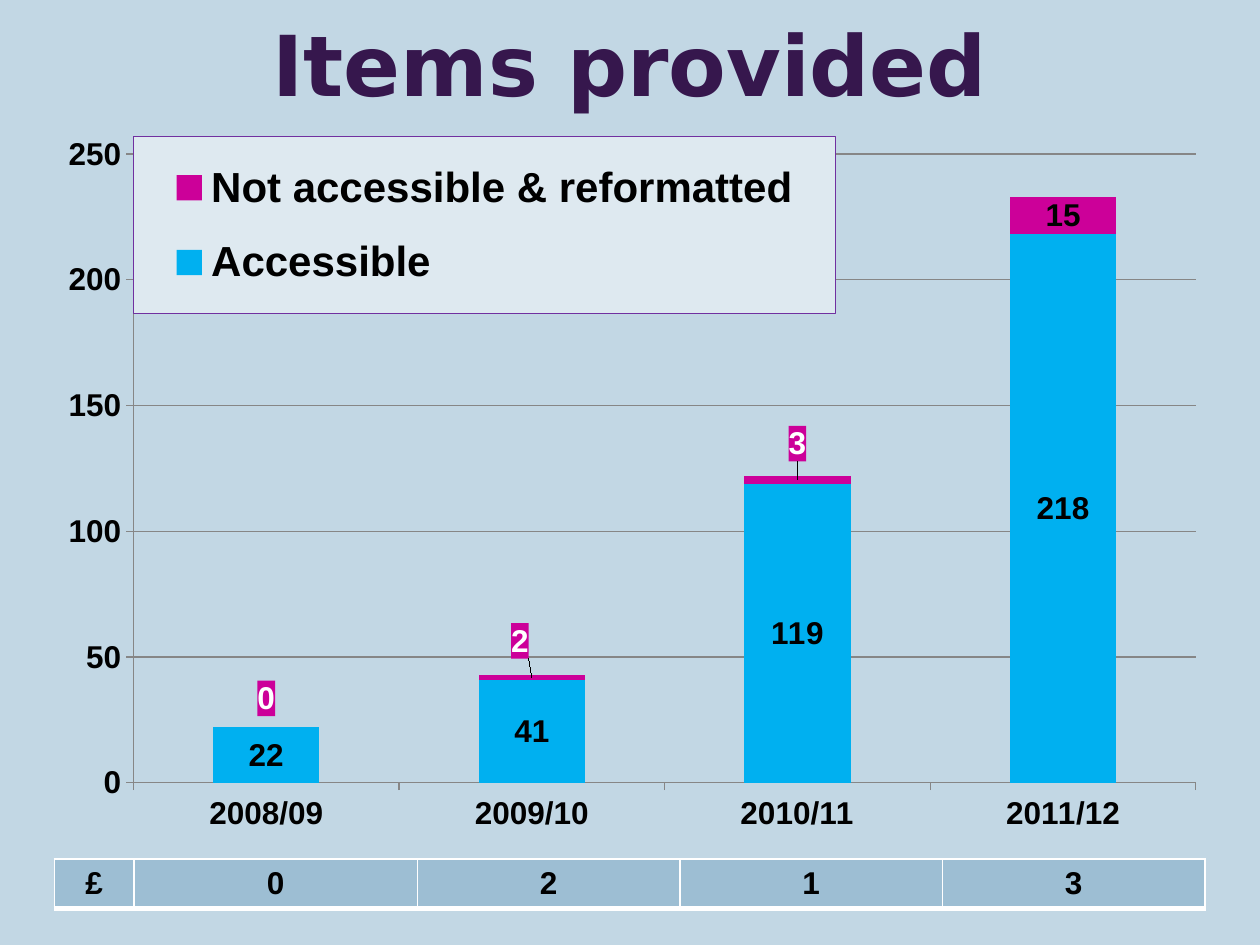
from lxml.etree import fromstring
from pptx import Presentation
from pptx.chart.data import CategoryChartData
from pptx.dml.color import RGBColor
from pptx.enum.chart import XL_CHART_TYPE, XL_LEGEND_POSITION, XL_TICK_MARK
from pptx.enum.text import MSO_ANCHOR, PP_ALIGN
from pptx.util import Pt

PALE = RGBColor(0xC2, 0xD7, 0xE4)
STEEL = RGBColor(0x9D, 0xBE, 0xD3)
PLUM = RGBColor(0x36, 0x17, 0x4D)
BLACK = RGBColor(0, 0, 0)
WHITE = RGBColor(0xFF, 0xFF, 0xFF)
GREY = RGBColor(0x86, 0x86, 0x86)
BLUE = RGBColor(0x00, 0xB0, 0xF0)
PINK = RGBColor(0xCC, 0x00, 0x99)
MIST = RGBColor(0xDE, 0xE9, 0xF0)
PURPLE = RGBColor(0x70, 0x30, 0xA0)

NS = ('xmlns:c="http://schemas.openxmlformats.org/drawingml/2006/chart" '
      'xmlns:a="http://schemas.openxmlformats.org/drawingml/2006/main"')
TITLE = {"name": "DejaVu Sans", "size": Pt(48), "bold": True}
BODY = {"name": "Arial", "size": Pt(18), "bold": True}
KEY = {"name": "Arial", "size": Pt(24), "bold": True}

YEARS = ["2008/09", "2009/10", "2010/11", "2011/12"]
SERIES = [
    ("Accessible", (22, 41, 119, 218), BLUE),
    ("Not accessible & reformatted", (0, 2, 3, 15), PINK),
]
SHIFTS = [(0, -0.04), (-0.01, -0.05), (0, -0.05)]
COSTS = ["£", "0", "2", "1", "3"]
WIDTHS = [45.5, 162, 150, 150, 150]


def style(font, values, color):
    for name, value in values.items():
        setattr(font, name, value)
    font.color.rgb = color


def solid(color):
    return f'<a:solidFill><a:srgbClr val="{color}"/></a:solidFill>'


def arrange(node, index, inner=False, **sizes):
    for old in node.xpath("c:layout"):
        node.remove(old)
    target = '<c:layoutTarget val="inner"/>' if inner else ""
    modes = "" if "w" not in sizes else (
        '<c:xMode val="edge"/><c:yMode val="edge"/>')
    parts = "".join(f'<c:{key} val="{val}"/>' for key, val in sizes.items())
    node.insert(index, fromstring(
        f"<c:layout {NS}><c:manualLayout>{target}{modes}{parts}"
        "</c:manualLayout></c:layout>"))


def paint(node, fill, line=""):
    node.xpath("c:txPr")[0].addprevious(
        fromstring(f"<c:spPr {NS}>{solid(fill)}{line}</c:spPr>"))


def add_title(slide, box):
    title = slide.shapes.title
    title.left, title.top, title.width, title.height = box
    frame = title.text_frame
    frame.text = "Items provided"
    frame.vertical_anchor = MSO_ANCHOR.MIDDLE
    para = frame.paragraphs[0]
    para.alignment = PP_ALIGN.CENTER
    style(para.runs[0].font, TITLE, PLUM)


def add_labels(chart, series):
    for item, (_, _, color) in zip(series, SERIES):
        item.format.fill.solid()
        item.format.fill.fore_color.rgb = color
        item.data_labels.show_value = True
        style(item.data_labels.font, BODY, BLACK)
    for index in range(len(SHIFTS)):
        style(series[1].points[index].data_label.font, BODY, WHITE)
    for node, (x, y) in zip(chart.element.xpath(".//c:dLbl"), SHIFTS):
        arrange(node, 1, x=x, y=y)
        paint(node, PINK)


def add_key(chart):
    chart.has_legend = True
    chart.legend.position = XL_LEGEND_POSITION.RIGHT
    chart.legend.include_in_layout = True
    style(chart.legend.font, KEY, BLACK)
    node = chart.element.xpath(".//c:legend")[0]
    arrange(node, 1, x=0.082, y=0.016, w=0.585, h=0.244)
    paint(node, MIST, f'<a:ln w="9525">{solid(PURPLE)}</a:ln>')


def add_bars(slide, box):
    data = CategoryChartData()
    data.categories = YEARS
    for name, values, _ in SERIES:
        data.add_series(name, values)
    chart = slide.shapes.add_chart(
        XL_CHART_TYPE.COLUMN_STACKED, *box, data).chart
    chart.has_title = False
    style(chart.font, BODY, BLACK)
    plot = chart.plots[0]
    plot.gap_width, plot.overlap = 150, 100
    plot.vary_by_categories = False
    for axis in (chart.category_axis, chart.value_axis):
        axis.major_tick_mark = XL_TICK_MARK.OUTSIDE
        axis.minor_tick_mark = XL_TICK_MARK.NONE
        axis.format.line.color.rgb = GREY
        style(axis.tick_labels.font, BODY, BLACK)
    scale = chart.value_axis
    scale.minimum_scale, scale.maximum_scale, scale.major_unit = 0, 250, 50
    scale.has_major_gridlines = True
    scale.major_gridlines.format.line.color.rgb = GREY
    arrange(chart.element.xpath(".//c:plotArea")[0], 0, True,
            x=0.082, y=0.04, w=0.885, h=0.868)
    add_labels(chart, list(plot.series))
    add_key(chart)


def add_costs(slide, box):
    table = slide.shapes.add_table(1, len(COSTS), *box).table
    table.first_row = table.horz_banding = False
    for column, width in zip(table.columns, WIDTHS):
        column.width = Pt(width)
    for cell, text in zip(table.rows[0].cells, COSTS):
        cell.text = text
        cell.vertical_anchor = MSO_ANCHOR.MIDDLE
        cell.fill.solid()
        cell.fill.fore_color.rgb = STEEL
        para = cell.text_frame.paragraphs[0]
        para.alignment = PP_ALIGN.CENTER
        style(para.runs[0].font, BODY, BLACK)
        props = cell._tc.get_or_add_tcPr()
        for index, (side, size) in enumerate(zip("LRTB", (1, 1, 1, 3))):
            props.insert(index, fromstring(
                f'<a:ln{side} {NS} w="{Pt(size)}">{solid(WHITE)}</a:ln{side}>'))


def main():
    deck = Presentation()
    deck.slide_width, deck.slide_height = Pt(720), Pt(540)
    slide = deck.slides.add_slide(deck.slide_layouts[5])
    slide.background.fill.solid()
    slide.background.fill.fore_color.rgb = PALE
    add_title(slide, (Pt(0), Pt(0), Pt(720), Pt(71.5)))
    add_costs(slide, (Pt(31), Pt(491), Pt(657.5), Pt(28)))
    add_bars(slide, (Pt(20), Pt(71.5), Pt(686), Pt(414)))
    deck.save("out.pptx")


if __name__ == "__main__":
    main()
